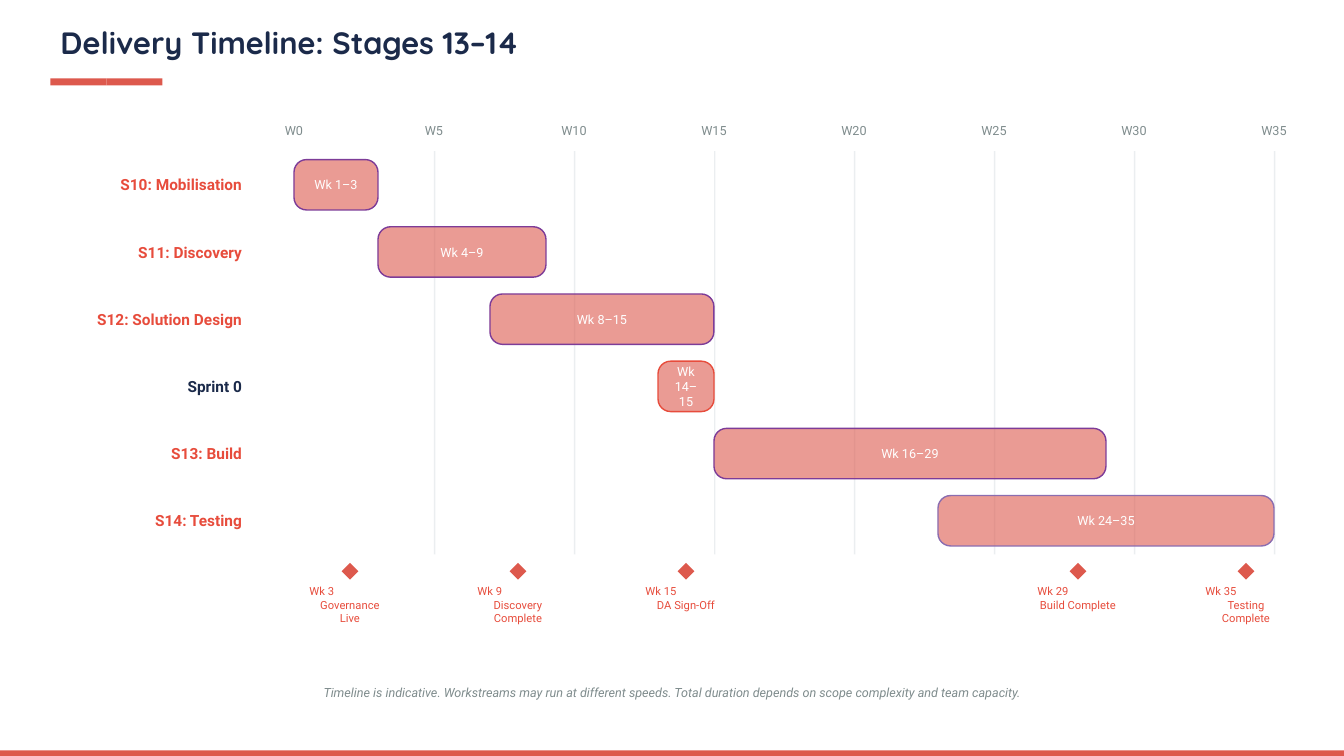
from lxml import etree
from pptx import Presentation
from pptx.dml.color import RGBColor
from pptx.enum import shapes, text
from pptx.oxml import ns
from pptx.util import Pt

HEX = {
    "navy": "1B2A4A", "grey": "7F8C8D", "rule": "7B8FA1", "coral": "DD594D",
    "red": "E74C3C", "plum": "7D3C98", "lilac": "8B6DB0", "white": "FFFFFF",
}
FORM = shapes.MSO_SHAPE
ALIGN = text.PP_ALIGN
ANCHOR = text.MSO_ANCHOR
LEFT, MID, RIGHT = ALIGN.LEFT, ALIGN.CENTER, ALIGN.RIGHT

deck = Presentation()
deck.slide_width, deck.slide_height = Pt(960), Pt(540)
slide = deck.slides.add_slide(deck.slide_layouts[5])


def write(words, box=None, at=None, size=9, color="grey", face="Roboto",
          bold=False, slant=False, align=(MID,), anchor=ANCHOR.MIDDLE, space=None):
    if box is None:
        box = slide.shapes.add_textbox(*map(Pt, at))
    frame = box.text_frame
    frame.word_wrap = True
    frame.auto_size = text.MSO_AUTO_SIZE.NONE
    frame.vertical_anchor = anchor
    frame.text = words
    for para, side in zip(frame.paragraphs, align):
        para.alignment = side
        para.line_spacing = space
        font = para.runs[0].font
        font.name, font.size = face, Pt(size)
        font.bold, font.italic = bold, slant
        font.color.rgb = RGBColor.from_string(HEX[color])


def block(form, at, fill="coral", alpha=None, line=None):
    shape = slide.shapes.add_shape(form, *map(Pt, at))
    shape.shadow.inherit = False
    shape.fill.solid()
    shape.fill.fore_color.rgb = RGBColor.from_string(HEX[fill])
    if alpha:
        tint = shape.fill._xPr.find(".//" + ns.qn("a:srgbClr"))
        etree.SubElement(tint, ns.qn("a:alpha")).set("val", str(alpha * 1000))
    if line:
        shape.line.color.rgb = RGBColor.from_string(HEX[line])
        shape.line.width = Pt(1)
    else:
        shape.line.fill.background()
    return shape


title = slide.shapes.title
title.left, title.top, title.width, title.height = map(Pt, (36, 12, 888, 40))
write("Delivery Timeline: Stages 13–14", title, size=22, color="navy",
      face="Quicksand", bold=True, align=(LEFT,), space=0.9)

START, WEEK = 210, 20
for week in range(0, 36, 5):
    x = START + week * WEEK
    write(f"W{week}", at=(x - 18, 84, 36, 18), anchor=ANCHOR.BOTTOM)
    if week:
        block(FORM.RECTANGLE, (x, 108, 1, 288), "rule", 15)

stages = [
    ("S10: Mobilisation", 1, 3, "red", "plum"),
    ("S11: Discovery", 4, 9, "red", "plum"),
    ("S12: Solution Design", 8, 15, "red", "plum"),
    ("Sprint 0", 14, 15, "navy", "red"),
    ("S13: Build", 16, 29, "red", "plum"),
    ("S14: Testing", 24, 35, "red", "lilac"),
]
for row, (name, first, last, ink, edge) in enumerate(stages):
    y = 114 + row * 48
    write(name, at=(12, y, 168, 36), size=11, color=ink, bold=True, align=(RIGHT,))
    bar = block(FORM.ROUNDED_RECTANGLE,
                (START + (first - 1) * WEEK, y, (last - first + 1) * WEEK, 36),
                alpha=60, line=edge)
    bar.adjustments[0] = 0.25
    write(f"Wk {first}–{last}", bar, color="white")

goals = [
    (3, "Governance Live"), (9, "Discovery Complete"), (15, "DA Sign-Off"),
    (29, "Build Complete"), (35, "Testing Complete"),
]
for week, goal in goals:
    x = START + (week - 1) * WEEK
    block(FORM.DIAMOND, (x - 6, 402, 12, 12))
    write(f"Wk {week}\n{goal}", at=(x - 36, 414, 72, 24), size=8, color="red",
          align=(LEFT, MID), anchor=ANCHOR.TOP)

write("Timeline is indicative. Workstreams may run at different speeds. "
      "Total duration depends on scope complexity and team capacity.",
      at=(12, 486, 936, 24), slant=True, anchor=ANCHOR.TOP)

for left, top, width, height in [(36, 56, 40, 5), (0, 536, 480, 4)]:
    for half in range(2):
        block(FORM.RECTANGLE, (left + half * width, top, width, height))

deck.save("out.pptx")
